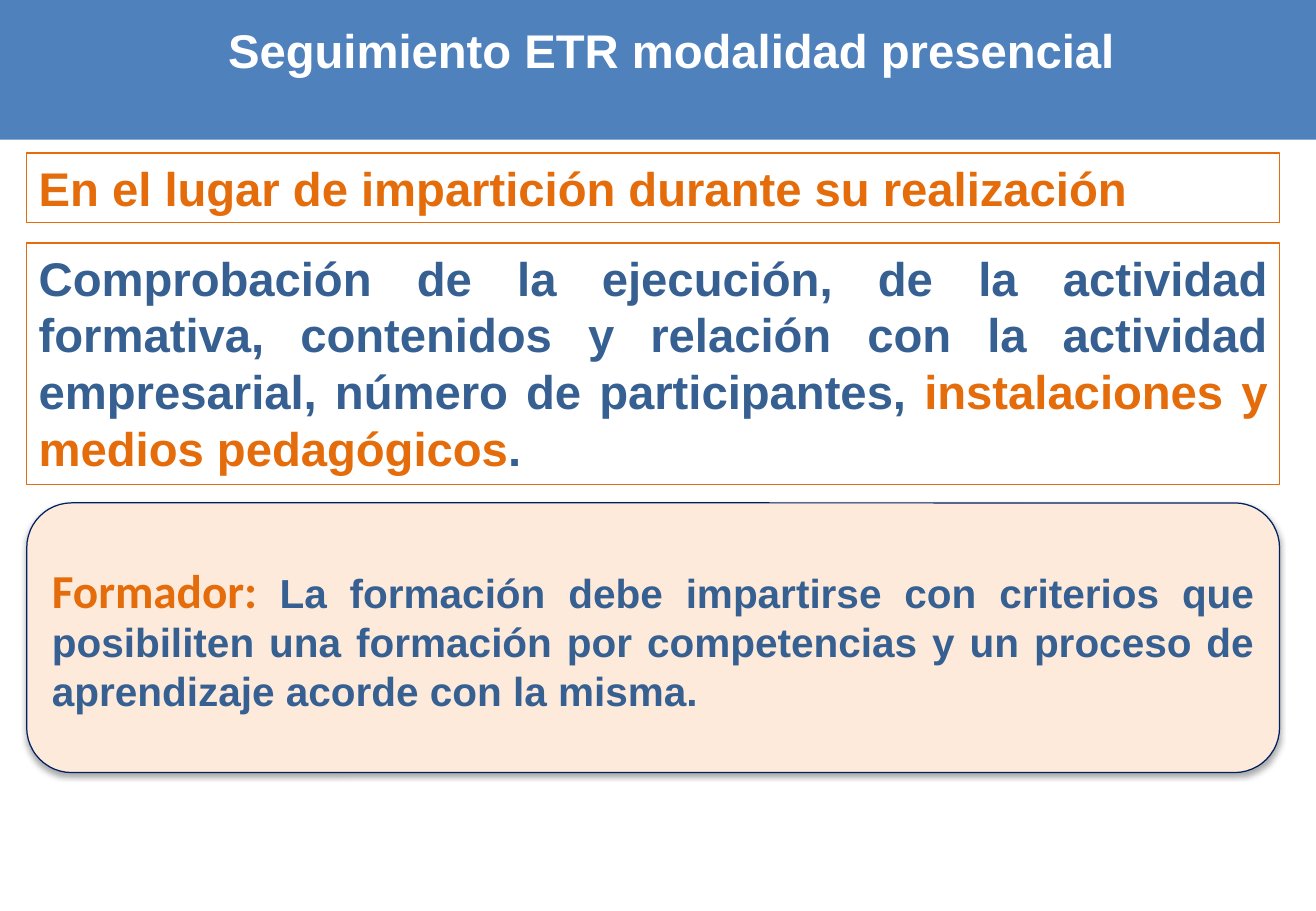
from lxml.etree import SubElement
from pptx import Presentation
from pptx.dml.color import RGBColor
from pptx.enum.shapes import MSO_SHAPE
from pptx.enum.text import MSO_ANCHOR, PP_ALIGN
from pptx.oxml.ns import qn
from pptx.util import Inches, Pt

COLORS = {
    "banner": "4F81BD",
    "white": "FFFFFF",
    "orange": "E46C0A",
    "blue": "376092",
    "peach": "FDEADA",
    "navy": "002060",
    "shadow": "000000",
}
LEFT, WIDTH = 0.22, 10.31


def add_panel(top, height, left=LEFT, width=WIDTH, kind=MSO_SHAPE.RECTANGLE, fill=None, line=None):
    panel = slide.shapes.add_shape(kind, Inches(left), Inches(top), Inches(width), Inches(height))
    panel.shadow.inherit = False
    if fill:
        panel.fill.solid()
        panel.fill.fore_color.rgb = RGBColor.from_string(COLORS[fill])
    else:
        panel.fill.background()
    if line:
        panel.line.color.rgb = RGBColor.from_string(COLORS[line])
        panel.line.width = Pt(0.75)
    else:
        panel.line.fill.background()
    return panel


def write(box, *parts, size=28, font="Arial", align=PP_ALIGN.JUSTIFY, anchor=MSO_ANCHOR.TOP):
    """Each part is (text, color) or (text, color, format overrides)."""
    frame = box.text_frame
    frame.word_wrap = True
    frame.vertical_anchor = anchor
    paragraph = frame.paragraphs[0]
    paragraph.alignment = align
    for text, color, *overrides in parts:
        style = {"size": size, "font": font, **(overrides[0] if overrides else {})}
        run = paragraph.add_run()
        run.text = text
        run.font.size = Pt(style["size"])
        run.font.name = style["font"]
        run.font.bold = True
        run.font.color.rgb = RGBColor.from_string(COLORS[color])


prs = Presentation()
prs.slide_width, prs.slide_height = Inches(10.83), Inches(7.5)
slide = prs.slides.add_slide(prs.slide_layouts[6])

add_panel(0, 1.15, left=0, width=10.83, fill="banner")
title = slide.shapes.add_textbox(Inches(0.11), Inches(0.13), Inches(10.83), Inches(0.57))
write(title, ("Seguimiento ETR modalidad presencial", "white"), align=PP_ALIGN.CENTER)

place = add_panel(1.26, 0.57, line="orange")
write(place, ("En el lugar de impartición durante su realización", "orange"))

checks = add_panel(2, 1.99, line="orange")
write(
    checks,
    ("Comprobación de la ejecución, de la actividad formativa, contenidos y relación "
     "con la actividad empresarial, número de participantes, ", "blue"),
    ("instalaciones y medios pedagógicos", "orange"),
    (".", "blue"),
)

trainer = add_panel(4.14, 2.22, kind=MSO_SHAPE.ROUNDED_RECTANGLE, fill="peach", line="navy")
write(
    trainer,
    ("Formador: ", "orange", {"size": 28, "font": "Calibri"}),
    ("La formación debe impartirse con criterios que posibiliten una formación por "
     "competencias y un proceso de aprendizaje acorde con la misma.", "blue"),
    size=24,
    anchor=MSO_ANCHOR.MIDDLE,
)
effects = trainer._element.spPr.find(qn("a:effectLst"))
shadow = SubElement(effects, qn("a:outerShdw"), blurRad=str(Pt(3.1)), dist=str(Pt(1.8)),
                    dir="5400000", rotWithShape="0")
shadow_color = SubElement(shadow, qn("a:srgbClr"), val=COLORS["shadow"])
SubElement(shadow_color, qn("a:alpha"), val="35000")

prs.save("out.pptx")
